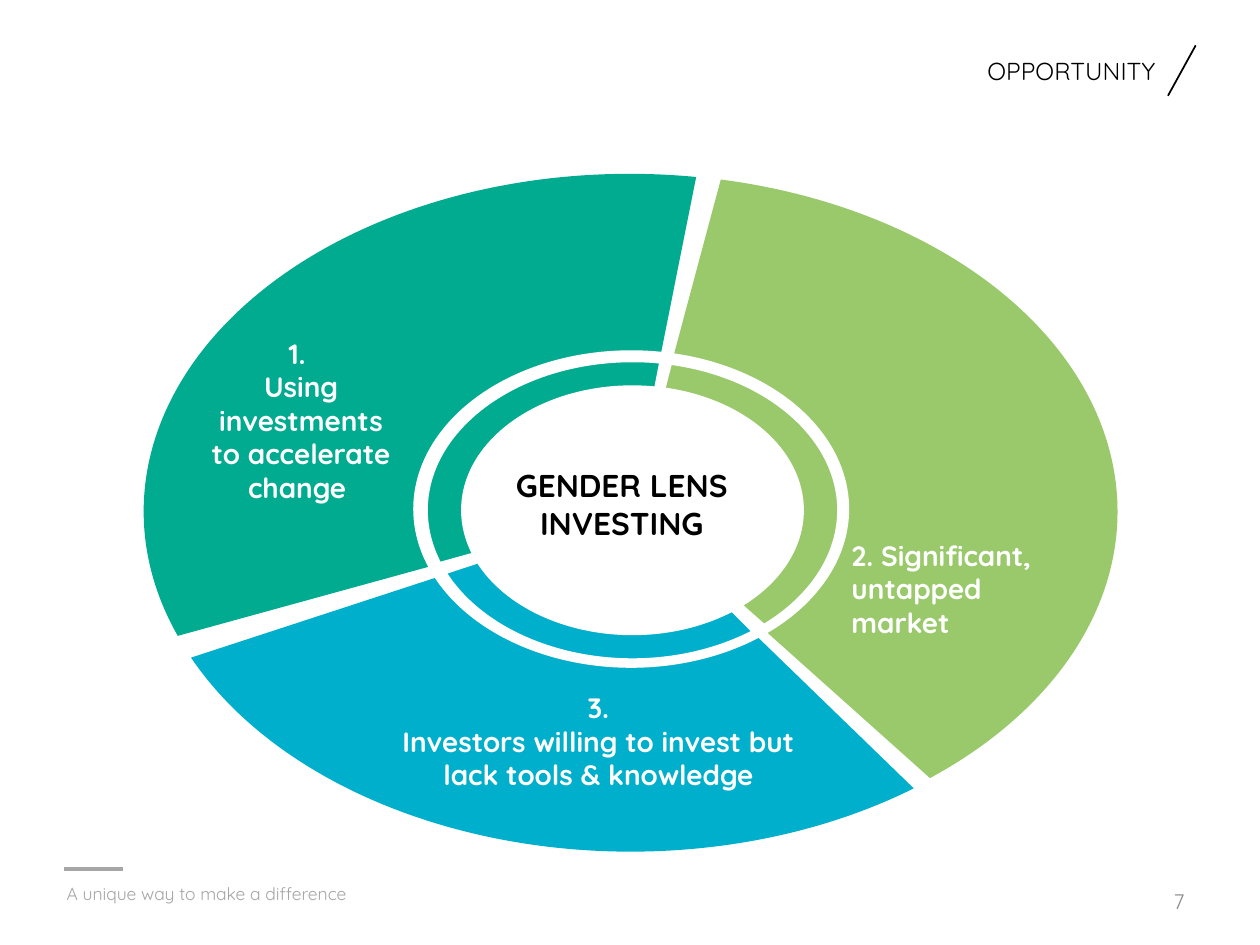
import math

from lxml import etree
from pptx import Presentation
from pptx import util as u
from pptx.dml.color import RGBColor
from pptx.enum import shapes, text
from pptx.oxml.ns import qn

FONT = "Quicksand"
TEAL, GREEN, BLUE = "00AB90", "99C96B", "00AFCB"
WHITE, BLACK, GREY = "FFFFFF", "000000", "A6A6A6"
LEFT, CENTER, RIGHT = text.PP_ALIGN.LEFT, text.PP_ALIGN.CENTER, text.PP_ALIGN.RIGHT
MIDDLE, BOTTOM = text.MSO_ANCHOR.MIDDLE, text.MSO_ANCHOR.BOTTOM


def rgb(color):
    """Return the colour for a hex string."""
    return RGBColor.from_string(color)


def inches(box):
    """Turn a box in inches into lengths."""
    return [u.Inches(v) for v in box]


def style(sp, fill, line=None, width=2.25):
    """Give a shape a flat fill and an optional outline."""
    sp.shadow.inherit = False
    sp.fill.solid()
    sp.fill.fore_color.rgb = rgb(fill)
    if line:
        sp.line.color.rgb = rgb(line)
        sp.line.width = u.Pt(width)
    else:
        sp.line.fill.background()


def add_text(s, box, lines, size, color, align=CENTER, anchor=MIDDLE, bold=False):
    """Add a wrapped text box with one paragraph per line."""
    tf = s.shapes.add_textbox(*inches(box)).text_frame
    tf.word_wrap = True
    tf.vertical_anchor = anchor
    for i, line in enumerate(lines):
        p = tf.paragraphs[0] if i == 0 else tf.add_paragraph()
        p.text = line
        p.alignment = align
        p.font.name = FONT
        p.font.size = u.Pt(size)
        p.font.bold = bold
        p.font.color.rgb = rgb(color)


def add_line(s, start, end, color, width):
    """Add a straight line without a shadow."""
    line = s.shapes.add_connector(shapes.MSO_CONNECTOR.STRAIGHT, *inches(start + end))
    line.line.color.rgb = rgb(color)
    line.line.width = u.Pt(width)
    etree.SubElement(line.element.spPr, qn("a:effectLst"))


def add_sector(s, box, start, end, color):
    """Add a pie sector running clockwise between two angles."""
    sp = s.shapes.add_shape(shapes.MSO_SHAPE.PIE, *inches(box))
    for i, angle in enumerate((start, end)):
        sp.adjustments[i] = angle * 60000 / 100000
    style(sp, color)


def arc_points(start, end):
    """Return Bezier points of a unit arc, split at the quadrants."""
    quadrants = [q for q in range(-360, 361, 90) if start < q < end]
    stops = [math.radians(a) for a in (start, *quadrants, end)]
    points = [(math.cos(stops[0]), math.sin(stops[0]))]
    for a, b in zip(stops, stops[1:]):
        k = 4 / 3 * math.tan((b - a) / 4)
        points += [(math.cos(a) - k * math.sin(a), math.sin(a) + k * math.cos(a)),
                   (math.cos(b) + k * math.sin(b), math.sin(b) - k * math.cos(b)),
                   (math.cos(b), math.sin(b))]
    return points


def curve(segments):
    """Merge every three straight segments into one Bezier curve."""
    for i in range(0, len(segments), 3):
        bezier = etree.Element(qn("a:cubicBezTo"))
        segments[i].addprevious(bezier)
        for segment in segments[i:i + 3]:
            bezier.append(segment[0])
            segment.getparent().remove(segment)


def add_ring_part(s, box, start, end, color, hole=0.82):
    """Add part of an elliptical ring that fits the box."""
    left, top, width, height = box
    rx, ry = width / 2, height / 2
    arc = arc_points(start, end)
    unit = arc + [(hole * x, hole * y) for x, y in reversed(arc)]
    points = [inches((left + rx + rx * x, top + ry + ry * y)) for x, y in unit]
    builder = s.shapes.build_freeform(*points[0])
    builder.add_line_segments(points[1:], close=True)
    sp = builder.convert_to_shape()
    segments = list(sp.element.iter(qn("a:lnTo")))
    curve(segments[:len(arc) - 1])
    curve(segments[len(arc):])
    style(sp, color, WHITE)


def add_wheel(s, box):
    """Draw the three sectors, the inner ring and their labels."""
    left, top, width, height = box
    sectors = [(0, 0, 164.6, 281.3, TEAL), (0.02, 0, 285, 41.8, GREEN),
               (0.01, 0.02, 44.1, 161.9, BLUE)]
    for dx, dy, start, end, color in sectors:
        add_sector(s, (left + dx, top + dy, width, height), start, end, color)
    hub = s.shapes.add_shape(shapes.MSO_SHAPE.OVAL,
                             *inches((left + 2.14, top + 1.4, 3.46, 2.52)))
    style(hub, WHITE)
    ring = (left + 2.24, top + 1.48, 3.28, 2.38)
    for start, end, color in [(159, 278, TEAL), (54, 155.5, BLUE), (-79.5, 50.5, GREEN)]:
        add_ring_part(s, ring, start, end, color)
    labels = [
        ((0.37, 1.02, 1.76, 1.65),
         ["1. ", "Using investments to accelerate change "], 16, WHITE, CENTER, BOTTOM),
        ((2.52, 2.11, 2.55, 1.02), ["GENDER LENS INVESTING"], 18, BLACK, CENTER, MIDDLE),
        ((1.79, 3.93, 3.64, 1.02),
         ["3.", "Investors willing to invest but lack tools & knowledge"],
         16, WHITE, CENTER, BOTTOM),
        ((5.52, 2.11, 1.84, 1.63),
         ["2. Significant, untapped market"], 16, WHITE, LEFT, BOTTOM),
    ]
    for (x, y, w, h), lines, size, color, align, anchor in labels:
        add_text(s, (left + x, top + y, w, h), lines, size, color, align, anchor, True)


def add_header(s, box):
    """Add the title with the slash at its right."""
    left, top, width, height = box
    right = left + width
    add_text(s, box, ["OPPORTUNITY"], 14, BLACK, RIGHT)
    add_line(s, (right, top + 0.58), (right + 0.22, top + 0.18), BLACK, 1)


def add_footer(s, box):
    """Add the short rule, the tagline and the page number."""
    left, top, width, height = box
    add_line(s, (left + 0.08, top), (left + 0.55, top), GREY, 2.25)
    add_text(s, (left, top + 0.07, 3.78, 0.24),
             ["A unique way to make a difference"], 10, GREY, LEFT)
    add_text(s, (left + width - 2.33, top + 0.05, 2.33, height - 0.05),
             ["7"], 12, "8C8C8C", RIGHT)


def main():
    """Build and save the slide."""
    prs = Presentation()
    prs.slide_width, prs.slide_height = u.Inches(10), u.Inches(7.5)
    s = prs.slides.add_slide(prs.slide_layouts[6])
    add_wheel(s, (1.14, 1.38, 7.71, 5.36))
    add_header(s, (0.49, 0.18, 8.78, 0.76))
    add_footer(s, (0.43, 6.9, 9.07, 0.45))
    prs.save("out.pptx")


if __name__ == "__main__":
    main()
